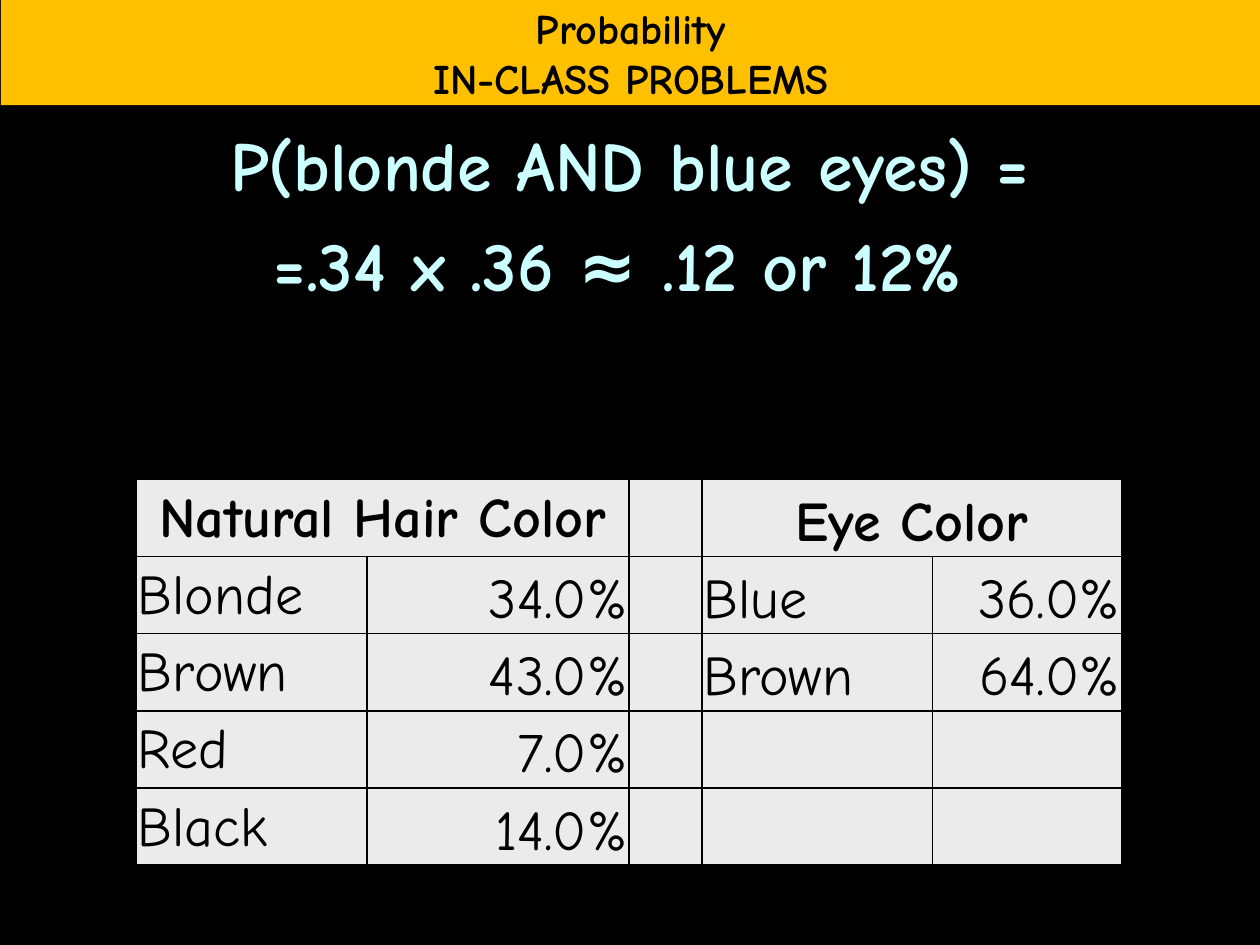
from dataclasses import dataclass

from lxml.etree import SubElement
from pptx import Presentation
from pptx.dml.color import RGBColor
from pptx.enum.shapes import MSO_SHAPE
from pptx.enum.text import MSO_ANCHOR, PP_ALIGN
from pptx.oxml.ns import qn
from pptx.util import Cm, Pt

FONT = "Comic Neue"
BLACK, AMBER, ICE, GREY = "000000", "FFC000", "CCFFFF", "EBEBEB"
COLUMN_WIDTHS = (4.65, 5.28, 1.47, 4.65, 3.81)
ROW_HEIGHT = 1.5
ROW_COUNT = 5


@dataclass(frozen=True)
class Distribution:
    title: str
    first_column: int
    label_margin: float
    title_margin: float
    shares: tuple[tuple[str, str], ...]


DISTRIBUTIONS = (
    Distribution("Natural Hair Color", 0, 0.1, 0.1,
                 (("Blonde", "34.0%"), ("Brown", "43.0%"),
                  ("Red", "7.0%"), ("Black", "14.0%"))),
    Distribution("Eye Color", 3, 0.02, 0.02,
                 (("Blue", "36.0%"), ("Brown", "64.0%"))),
)


def rgb(value: str) -> RGBColor:
    return RGBColor.from_string(value)


def paint(target, color: str) -> None:
    target.fill.solid()
    target.fill.fore_color.rgb = rgb(color)


def write(frame, text: str, *, size: float, color: str = BLACK, bold: bool = False,
          align: PP_ALIGN = PP_ALIGN.LEFT, space_before: float = 0) -> None:
    """Fill a text frame with one paragraph per line of text."""
    for index, line in enumerate(text.split("\n")):
        para = frame.add_paragraph() if index else frame.paragraphs[0]
        para.alignment = align
        para.space_before = Pt(space_before)
        span = para.add_run()
        span.text = line
        span.font.name = FONT
        span.font.size = Pt(size)
        span.font.bold = bold
        span.font.color.rgb = rgb(color)


def add_borders(cell) -> None:
    """Put 1 pt black lines on all sides, ahead of the fill as the schema asks."""
    properties = cell._tc.get_or_add_tcPr()
    for position, side in enumerate(("a:lnL", "a:lnR", "a:lnT", "a:lnB")):
        line = SubElement(properties, qn(side), w=str(Pt(1)))
        solid = SubElement(line, qn("a:solidFill"))
        SubElement(solid, qn("a:srgbClr"), val=BLACK)
        properties.insert(position, line)


def write_cell(cell, text: str, margin: float, align: PP_ALIGN, bold: bool = False) -> None:
    cell.vertical_anchor = MSO_ANCHOR.BOTTOM
    cell.margin_left = cell.margin_right = Cm(0.03)
    cell.margin_top = cell.margin_bottom = Cm(margin)
    write(cell.text_frame, text, size=32, bold=bold, align=align)


def add_banner(page, width: int) -> None:
    banner = page.shapes.add_shape(MSO_SHAPE.RECTANGLE, Cm(0.02), 0, width, Cm(2.12))
    banner.shadow.inherit = False
    banner.line.fill.background()
    paint(banner, AMBER)
    banner.text_frame.word_wrap = False
    banner.text_frame.vertical_anchor = MSO_ANCHOR.MIDDLE
    write(banner.text_frame, "Probability\nIN-CLASS PROBLEMS",
          size=24, bold=True, align=PP_ALIGN.CENTER)


def add_solution(page) -> None:
    box = page.shapes.add_textbox(Cm(1.27), Cm(2.33), Cm(22.86), Cm(15.68))
    box.text_frame.word_wrap = True
    write(box.text_frame, "P(blonde AND blue eyes) =\n=.34 x .36 ≈ .12 or 12% ",
          size=40, color=ICE, bold=True, align=PP_ALIGN.CENTER, space_before=9)


def add_distribution_table(page) -> None:
    table = page.shapes.add_table(
        ROW_COUNT, len(COLUMN_WIDTHS), Cm(2.75), Cm(9.66),
        Cm(sum(COLUMN_WIDTHS)), Cm(ROW_HEIGHT * ROW_COUNT)).table
    table.first_row = table.horz_banding = False
    for column, width in zip(table.columns, COLUMN_WIDTHS):
        column.width = Cm(width)
    for row in table.rows:
        row.height = Cm(ROW_HEIGHT)
    for cell in table.iter_cells():
        paint(cell, GREY)
        add_borders(cell)
    for group in DISTRIBUTIONS:
        left, right = group.first_column, group.first_column + 1
        header = table.cell(0, left)
        header.merge(table.cell(0, right))
        write_cell(header, group.title, group.title_margin, PP_ALIGN.CENTER, bold=True)
        for row, (label, share) in enumerate(group.shares, start=1):
            write_cell(table.cell(row, left), label, group.label_margin, PP_ALIGN.LEFT)
            write_cell(table.cell(row, right), share, 0.02, PP_ALIGN.RIGHT)


def main() -> None:
    deck = Presentation()
    deck.slide_width, deck.slide_height = Cm(25.4), Cm(19.05)
    page = deck.slides.add_slide(deck.slide_layouts[6])
    paint(page.background, BLACK)
    add_solution(page)
    add_banner(page, deck.slide_width)
    add_distribution_table(page)
    deck.save("out.pptx")


if __name__ == "__main__":
    main()
